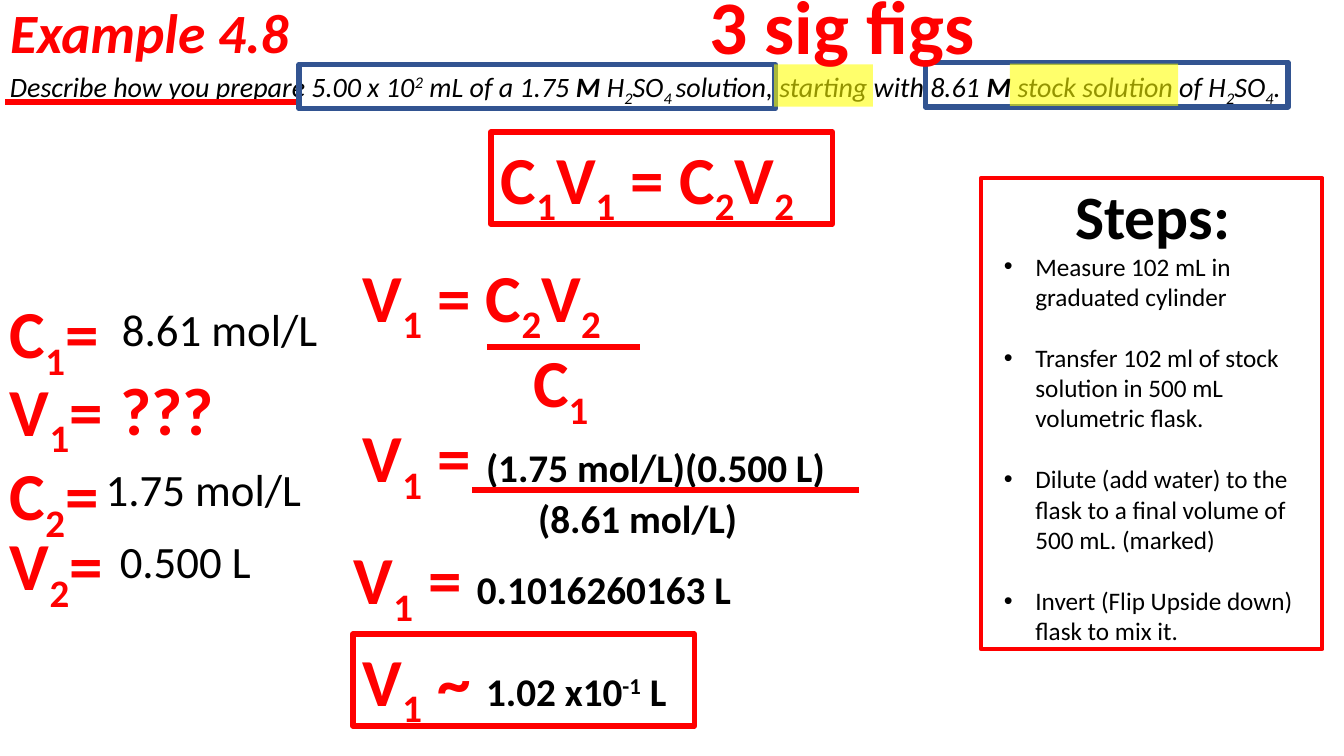
import pptx
import pptx.dml.color
import pptx.enum.shapes
import pptx.enum.text
import pptx.oxml.ns
import pptx.util
from lxml import etree

Pt = pptx.util.Pt
qn = pptx.oxml.ns.qn
RED, BLACK, BLUE, YELLOW = "FF0000", "000000", "325491", "FFFF00"
BIG = {"size": Pt(48), "bold": True, "color": RED}
SMALL = {"size": Pt(28), "bold": True, "color": BLACK}
VALUE = {"size": Pt(32), "color": BLACK}
QUESTION = {"size": Pt(20), "italic": True, "color": BLACK}
STEP = {"size": Pt(18), "color": BLACK}
STEPS = [
    "Measure 102 mL in graduated cylinder",
    "Transfer 102 ml of stock solution in 500 mL volumetric flask.",
    "Dilute (add water) to the flask to a final volume of 500 mL. (marked)",
    "Invert (Flip Upside down) flask to mix it.",
]


def rgb(color):
    return pptx.dml.color.RGBColor.from_string(color)


def add_run(p, text, fmt, baseline=0):
    r = p.add_run()
    r.text = text
    for name, value in {"name": "Calibri", **fmt}.items():
        if name == "color":
            r.font.color.rgb = rgb(value)
        else:
            setattr(r.font, name, value)
    if baseline:
        r._r.get_or_add_rPr().set("baseline", str(baseline))


def add_marked(p, text, fmt):
    """Between bars: ^ is superscript, * is bold, anything else subscript."""
    for i, part in enumerate(text.split("|")):
        if i % 2 == 0:
            if part:
                add_run(p, part, fmt)
        elif part[0] == "^":
            add_run(p, part[1:], fmt, 30000)
        elif part[0] == "*":
            add_run(p, part[1:], {**fmt, "bold": True})
        else:
            add_run(p, part, fmt, -25000)


def write(sp, parts):
    tf = sp.text_frame
    tf.word_wrap = True
    tf.vertical_anchor = pptx.enum.text.MSO_ANCHOR.TOP
    p = tf.paragraphs[0]
    p.alignment = pptx.enum.text.PP_ALIGN.LEFT
    for text, fmt in parts:
        add_marked(p, text, fmt)


def add_text(s, x, y, w, h, *parts):
    sp = s.shapes.add_textbox(Pt(x), Pt(y), Pt(w), Pt(h))
    write(sp, parts)
    return sp


def add_rect(s, x, y, w, h):
    sp = s.shapes.add_shape(pptx.enum.shapes.MSO_SHAPE.RECTANGLE, Pt(x), Pt(y), Pt(w), Pt(h))
    sp.shadow.inherit = False
    return sp


def add_frame(s, x, y, w, h, color, weight, *parts):
    sp = add_rect(s, x, y, w, h)
    sp.fill.background()
    sp.line.color.rgb = rgb(color)
    sp.line.width = Pt(weight)
    if parts:
        write(sp, parts)


def add_highlight(s, x, y, w, h):
    sp = add_rect(s, x, y, w, h)
    sp.fill.solid()
    sp.fill.fore_color.rgb = rgb(YELLOW)
    sp.line.fill.background()
    color = sp._element.spPr.find(qn("a:solidFill"))[0]
    etree.SubElement(color, qn("a:alpha")).set("val", "58000")


def add_rule(s, x, y, w):
    sp = s.shapes.add_connector(
        pptx.enum.shapes.MSO_CONNECTOR.STRAIGHT, Pt(x), Pt(y), Pt(x + w), Pt(y))
    sp.line.color.rgb = rgb(RED)
    sp.line.width = Pt(4.25)
    etree.SubElement(sp._element.spPr, qn("a:effectLst"))


def add_title(s, x, y, w, h):
    sp = s.shapes.title
    box = {"left": x, "top": y, "width": w, "height": h}
    for name, value in box.items():
        setattr(sp, name, Pt(value))
    write(sp, [("Example 4.8", {"size": Pt(39.6), "bold": True, "italic": True, "color": RED})])
    sp.text_frame.vertical_anchor = pptx.enum.text.MSO_ANCHOR.MIDDLE
    sp.text_frame.paragraphs[0].line_spacing = 0.9


def add_question(s, x, y, w, h):
    add_text(s, x, y, w, h, (
        "Describe how you prepare 5.00 x 10|^2| mL of a 1.75 |*M| H|2|SO|4 |solution, "
        "starting with 8.61 |*M| stock solution of H|2|SO|4|.", QUESTION))
    add_rule(s, x + 3.6, y + 26.7, 210.2)
    for dx, dy, width in [(213.8, 0, 340), (661, -1.4, 259)]:
        add_frame(s, x + dx, y + dy, width, h, BLUE, 4)
    for dx, dy, width in [(553, 0, 70.5), (721.4, -0.6, 120.2)]:
        add_highlight(s, x + dx, y + dy, width, h - 1.5)


def add_givens(s, x, y, w, h):
    rows = [
        ("C|1|=", 0, "8.61 mol/L", 80, 7.2, VALUE),
        ("V|1|=", 55.5, "???", 79, 54.7, BIG),
        ("C|2|=", 115.9, "1.75 mol/L", 68.4, 121.7, VALUE),
        ("V|2|=", 165.6, "0.500 L", 78.5, 173.5, VALUE),
    ]
    for label, label_dy, value, dx, value_dy, fmt in rows:
        add_text(s, x, y + label_dy, 85, h / 4, (label, BIG))
        add_text(s, x + dx, y + value_dy, w - 80, h / 4, (value, fmt))


def add_working(s, x, y, w, h):
    add_text(s, x, y, 244, 65.5, ("V|1| = C|2|V|2|", BIG))
    add_rule(s, x + 95.8, y + 69.1, 109.4)
    add_text(s, x + 121.7, y + 61.2, 58.3, 65.5, ("C|1|", BIG))
    add_text(s, x, y + 114.5, w, 65.5, ("V|1| = ", BIG), ("(1.75 mol/L)(0.500 L)", SMALL))
    add_rule(s, x + 85, y + 171.3, 276.5)
    add_text(s, x + 125.3, y + 170.6, 160.6, 41, ("(8.61 mol/L)", SMALL))
    add_text(s, x - 6.5, y + 201.6, w, 65.5, ("V|1| = ", BIG), ("0.1016260163 L", SMALL))
    add_frame(s, x, y + h - 65.5, 244, 65.5, RED, 4,
              ("V|1| ~ ", BIG), ("1.02 x10|^-1| L", SMALL))


def add_steps(s, x, y, w, h):
    add_text(s, x + 60.4, y - 3.6, 138.2, 60.5,
             ("Steps:", {"size": Pt(44), "bold": True, "color": BLACK}))
    add_frame(s, x, y, w, h, RED, 3)
    sp = s.shapes.add_textbox(Pt(x + 9.4), Pt(y + 48.3), Pt(w - 9.4), Pt(h - 45.3))
    tf = sp.text_frame
    tf.word_wrap = True
    for i, step in enumerate(STEPS):
        p = tf.paragraphs[0] if i == 0 else tf.add_paragraph()
        pPr = p._p.get_or_add_pPr()
        pPr.set("marL", str(Pt(22.5)))
        pPr.set("indent", str(Pt(-22.5)))
        etree.SubElement(pPr, qn("a:buFont")).set("typeface", "Arial")
        etree.SubElement(pPr, qn("a:buChar")).set("char", "•")
        if i:
            p.space_before = Pt(22)
        add_run(p, step, STEP)


def main():
    prs = pptx.Presentation()
    prs.slide_width, prs.slide_height = Pt(960), Pt(540)
    s = prs.slides.add_slide(prs.slide_layouts[5])
    add_title(s, 0, 0, 828, 51)
    add_question(s, 0, 46, 960, 31.7)
    add_frame(s, 350.6, 94.3, 244, 65.5, RED, 4, ("C|1|V|1| = C|2|V|2|", BIG))
    add_givens(s, 0, 204.5, 244, 231)
    add_working(s, 252, 178.6, 352, 339.8)
    add_text(s, 499.7, -18.7, 257, 72.7, ("3 sig figs", {**BIG, "size": Pt(54)}))
    add_steps(s, 700.6, 127.4, 244, 336.2)
    prs.save("out.pptx")


if __name__ == "__main__":
    main()
